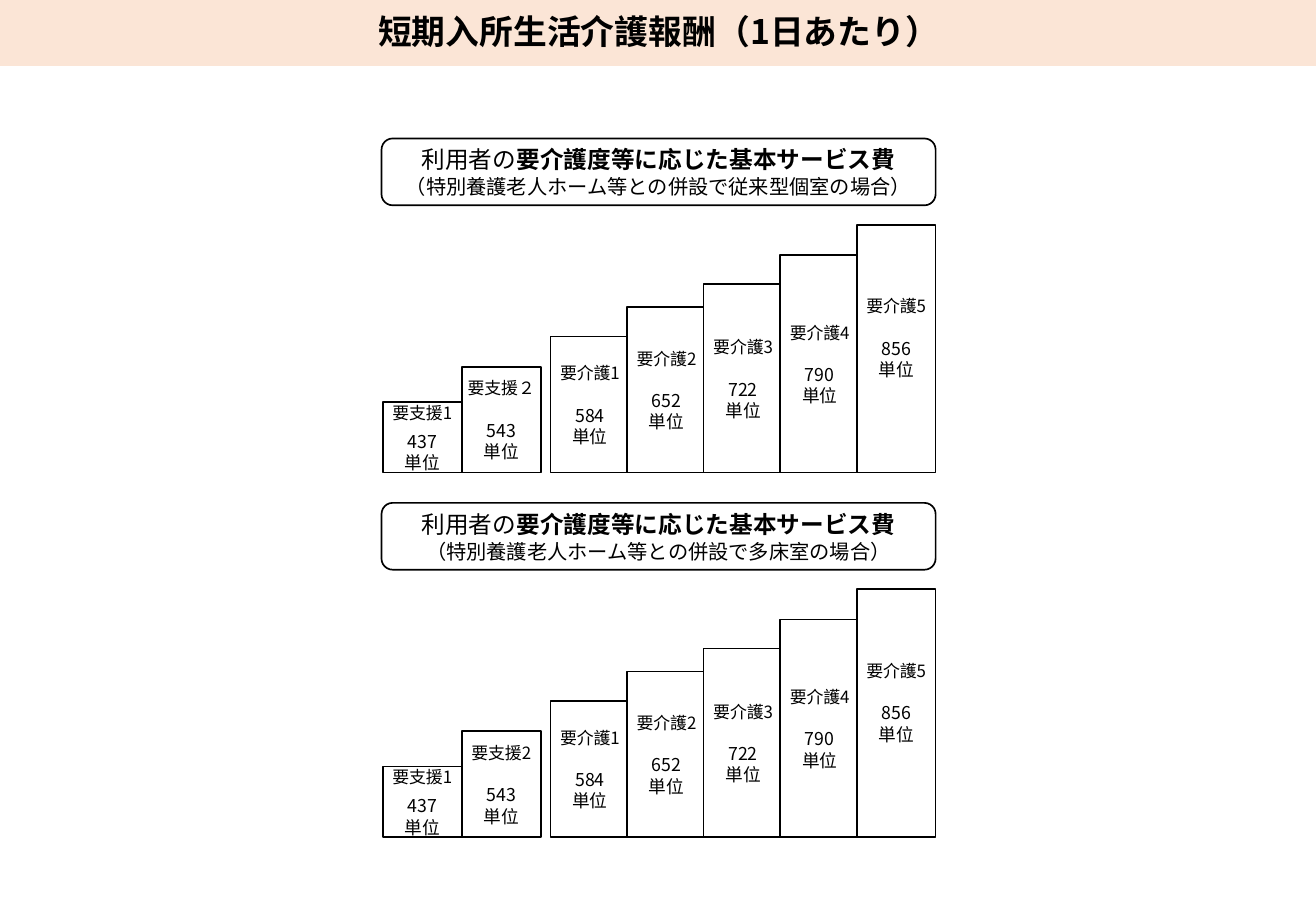
from dataclasses import dataclass

from lxml.etree import SubElement
from pptx import Presentation
from pptx.dml.color import RGBColor
from pptx.enum.shapes import MSO_SHAPE
from pptx.enum.text import MSO_ANCHOR, PP_ALIGN
from pptx.oxml.ns import qn
from pptx.shapes.autoshape import Shape
from pptx.shapes.shapetree import GroupShapes, SlideShapes
from pptx.util import Inches, Pt

FONT = "Noto Sans CJK JP"
BLACK = "000000"
WHITE = "FFFFFF"
PEACH = "FBE5D6"
BAR_WIDTH = 0.65
BAR_BASE = 2.75
SUPPORT_LEFT = 3.15
CARE_LEFT = 4.53
CARE_STEP = 0.63
BAR_LINE = 12.6


@dataclass
class Span:
    text: str
    size: float
    bold: bool = False


@dataclass
class Line:
    spans: list[Span]
    height: float | None = None
    gap: float = 0


@dataclass
class Bar:
    label: str
    units: str
    left: float
    height: float
    gap: float = BAR_LINE
    bottom_inset: float = 0.05


@dataclass
class Panel:
    top: float
    condition: str
    second_label: str


def color(code: str) -> RGBColor:
    return RGBColor.from_string(code)


def add_box(shapes: SlideShapes | GroupShapes, kind: MSO_SHAPE, left: float, top: float,
            width: float, height: float, fill: str, outline: str,
            side_inset: float, bottom_inset: float = 0.05) -> Shape:
    box = shapes.add_shape(kind, Inches(left), Inches(top), Inches(width), Inches(height))
    box.shadow.inherit = False
    box.fill.solid()
    box.fill.fore_color.rgb = color(fill)
    box.line.color.rgb = color(outline)
    box.line.width = Pt(1)
    frame = box.text_frame
    frame.word_wrap = True
    frame.vertical_anchor = MSO_ANCHOR.MIDDLE
    frame.margin_left = frame.margin_right = Inches(side_inset)
    frame.margin_top = Inches(0.05)
    frame.margin_bottom = Inches(bottom_inset)
    return box


def write_lines(box: Shape, lines: list[Line]) -> None:
    frame = box.text_frame
    for index, line in enumerate(lines):
        para = frame.add_paragraph() if index else frame.paragraphs[0]
        para.alignment = PP_ALIGN.CENTER
        para.space_before = Pt(line.gap)
        if line.height:
            para.line_spacing = Pt(line.height)
        for span in line.spans:
            run = para.add_run()
            run.text = span.text
            run.font.size = Pt(span.size)
            run.font.bold = span.bold
            run.font.color.rgb = color(BLACK)
            run.font.name = FONT
            SubElement(run._r.get_or_add_rPr(), qn("a:ea"), typeface=FONT)


def draw_bar(shapes: GroupShapes, bar: Bar, base: float) -> None:
    box = add_box(shapes, MSO_SHAPE.RECTANGLE, bar.left, base - bar.height, BAR_WIDTH,
                  bar.height, WHITE, BLACK, 0, bar.bottom_inset)
    write_lines(box, [
        Line([Span(bar.label, 10)], BAR_LINE),
        Line([Span(bar.units, 10.5)], BAR_LINE, bar.gap),
        Line([Span("単位", 10.5)], BAR_LINE),
    ])


def draw_panel(shapes: SlideShapes, panel: Panel) -> None:
    group = shapes.add_group_shape().shapes
    bars = [
        Bar("要支援1", "437", SUPPORT_LEFT, 0.58, gap=4.8),
        Bar(panel.second_label, "543", SUPPORT_LEFT + BAR_WIDTH, 0.87),
        Bar("要介護1", "584", CARE_LEFT, 1.12),
        Bar("要介護2", "652", CARE_LEFT + CARE_STEP, 1.36),
        Bar("要介護3", "722", CARE_LEFT + 2 * CARE_STEP, 1.55),
        Bar("要介護4", "790", CARE_LEFT + 3 * CARE_STEP, 1.79),
        Bar("要介護5", "856", CARE_LEFT + 4 * CARE_STEP, 2.04, bottom_inset=0.23),
    ]
    for bar in bars:
        draw_bar(group, bar, panel.top + BAR_BASE)
    heading = add_box(group, MSO_SHAPE.ROUNDED_RECTANGLE, 3.14, panel.top, 4.56, 0.55,
                      WHITE, BLACK, 0.1)
    write_lines(heading, [
        Line([Span("利用者の", 14), Span("要介護度等に応じた基本サービス費", 14, True)], 17),
        Line([Span(panel.condition, 12)], 15),
    ])


def main() -> None:
    deck = Presentation()
    deck.slide_width = Inches(10.83)
    deck.slide_height = Inches(7.5)
    page = deck.slides.add_slide(deck.slide_layouts[6])
    first = Panel(1.14, "（特別養護老人ホーム等との併設で従来型個室の場合）", "要支援２")
    second = Panel(4.14, "（特別養護老人ホーム等との併設で多床室の場合）", "要支援2")
    draw_panel(page.shapes, first)
    title = add_box(page.shapes, MSO_SHAPE.RECTANGLE, 0, -0.03, 10.84, 0.57,
                    PEACH, PEACH, 0.09)
    write_lines(title, [Line([Span("短期入所生活介護報酬（1日あたり）", 20, True)])])
    draw_panel(page.shapes, second)
    deck.save("out.pptx")


if __name__ == "__main__":
    main()
